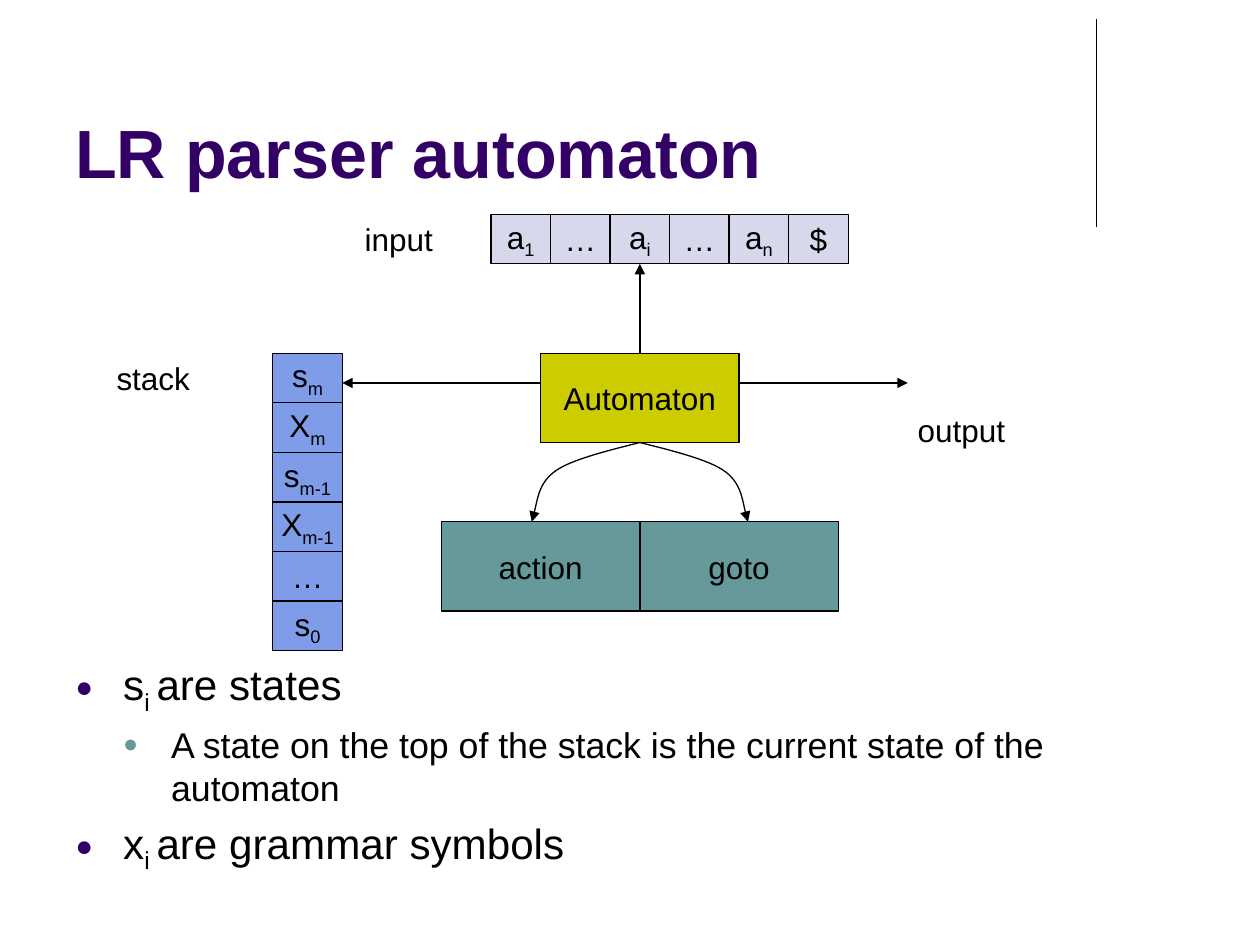
from lxml.etree import SubElement as Sub
from pptx import Presentation
from pptx.dml.color import RGBColor as RGB
from pptx.enum.shapes import MSO_CONNECTOR as Conn, MSO_SHAPE as Shape
from pptx.enum.text import MSO_ANCHOR as Anchor, PP_ALIGN as Align
from pptx.oxml.ns import qn
from pptx.util import Cm, Inches, Pt

BLACK = RGB(0x00, 0x00, 0x00)
PURPLE = RGB(0x33, 0x00, 0x66)
TEAL = RGB(0x66, 0x99, 0x99)
LILAC = RGB(0xD8, 0xD8, 0xEC)
BLUE = RGB(0x7E, 0x9C, 0xE8)
OLIVE = RGB(0xCC, 0xCC, 0x00)
FONT = "Arial"
WIDE, HIGH = Inches(10), Inches(7.5)
LEFT, TOP = 5.5, 4.32
MID = 7.4
BEND = [(0.28, 0.08), (1.3, 0.3), (1.68, 0.56), (2.04, 0.8), (2.1, 1.37), (2.18, 1.6)]


def spot(col, row):
    """Turn a column and row of the one-centimetre grid into a slide position."""
    return Cm(LEFT + col), Cm(TOP + row)


def share(x, y):
    """Turn shares of the slide's size into lengths."""
    return int(WIDE * x), int(HIGH * y)


def write(para, text, size=18, color=BLACK, bold=False):
    """Add runs to a paragraph, lowering every second part split at a bar."""
    for i, part in enumerate(text.split("|")):
        run = para.add_run()
        run.text = part
        font = run.font
        font.name, font.size, font.bold = FONT, Pt(size), bold
        font.color.rgb = color
        if i % 2:
            run._r.get_or_add_rPr().set("baseline", "-25000")


def box(slide, col, row, cols, rows, fill, text):
    """Draw a filled rectangle with centred text on the grid."""
    shape = slide.shapes.add_shape(Shape.RECTANGLE, *spot(col, row), Cm(cols), Cm(rows))
    shape.shadow.inherit = False
    shape.fill.solid()
    shape.fill.fore_color.rgb = fill
    ink(shape)
    frame = shape.text_frame
    frame.word_wrap, frame.vertical_anchor = False, Anchor.MIDDLE
    para = frame.paragraphs[0]
    para.alignment = Align.CENTER
    write(para, text)


def ink(shape, head=False):
    """Give a shape a thin black line, with an arrowhead at its end if wanted."""
    shape.line.color.rgb = BLACK
    shape.line.width = Pt(0.75)
    if head:
        Sub(shape.line._get_or_add_ln(), qn("a:tailEnd"), type="triangle")


def line(slide, start, end, head=True):
    """Draw a straight line between two slide positions."""
    wire = slide.shapes.add_connector(Conn.STRAIGHT, *start, *end)
    ink(wire, head)
    Sub(wire._element.spPr, qn("a:effectLst"))


def curve(slide, col, row, side):
    """Draw a curved arrow that bends down to one side."""
    pen = slide.shapes.build_freeform(*spot(col, row))
    pen.add_line_segments([spot(col + side * x, row + y) for x, y in BEND], close=False)
    shape = pen.convert_to_shape()
    shape.shadow.inherit = False
    shape.fill.background()
    ink(shape, True)
    steps = list(shape._element.iter(qn("a:lnTo")))
    for i in range(0, len(steps), 3):
        arc = Sub(steps[i].getparent(), qn("a:cubicBezTo"))
        for step in steps[i:i + 3]:
            arc.append(step[0])
            step.getparent().remove(step)


def label(slide, col, row, cols, text):
    """Place a one-line label on the grid."""
    area = slide.shapes.add_textbox(*spot(col, row), Cm(cols), Cm(1))
    area.text_frame.word_wrap = False
    write(area.text_frame.paragraphs[0], text)


def block(slide, at, size):
    """Add a wrapping text box by shares of the slide and return its frame."""
    frame = slide.shapes.add_textbox(*share(*at), *share(*size)).text_frame
    frame.word_wrap = True
    return frame


def point(para, text, level, size, color, gap):
    """Write a bulleted paragraph."""
    props = para._p.get_or_add_pPr()
    step = Inches(0.38)
    props.set("marL", str(step * (level + 1)))
    props.set("indent", str(-step))
    para.level = level
    para.space_before = Pt(gap)
    Sub(Sub(props, qn("a:buClr")), qn("a:srgbClr"), val=str(color))
    Sub(props, qn("a:buSzPct"), val="70000")
    Sub(props, qn("a:buFont"), typeface=FONT)
    Sub(props, qn("a:buChar"), char="●")
    write(para, text, size)


def main():
    """Build the slide and save it."""
    deck = Presentation()
    deck.slide_width, deck.slide_height = WIDE, HIGH
    slide = deck.slides.add_slide(deck.slide_layouts[6])

    line(slide, share(0.87, 0.02), share(0.87, 0.24), False)
    title = block(slide, (0.05, 0.02), (0.82, 0.19))
    title.vertical_anchor = Anchor.BOTTOM
    write(title.paragraphs[0], "LR parser automaton", 39, PURPLE, True)

    for i, text in enumerate(["a|1", "…", "a|i", "…", "a|n", "$"]):
        box(slide, 4.4 + 1.2 * i, 0, 1.2, 1, LILAC, text)
    for i, text in enumerate(["s|m", "X|m", "s|m-1", "X|m-1", "…", "s|0"]):
        box(slide, 0, 2.8 + i, 1.4, 1, BLUE, text)
    box(slide, MID - 2, 2.8, 4, 1.8, OLIVE, "Automaton")
    box(slide, MID - 4, 6.2, 4, 1.8, TEAL, "action")
    box(slide, MID, 6.2, 4, 1.8, TEAL, "goto")

    line(slide, spot(MID, 2.8), spot(MID, 1))
    line(slide, spot(MID - 2, 3.4), spot(1.4, 3.4))
    line(slide, spot(MID + 2, 3.4), spot(12.8, 3.4))
    for side in (-1, 1):
        curve(slide, MID, 4.6, side)

    label(slide, 1.6, 0, 1.9, "input")
    label(slide, -3.4, 2.8, 2, "stack")
    label(slide, 12.75, 3.85, 2.3, "output")

    body = block(slide, (0.05, 0.69), (0.9, 0.21))
    point(body.paragraphs[0], "s|i |are states", 0, 24.1, PURPLE, 0)
    state = "A state on the top of the stack is the current state of the automaton"
    point(body.add_paragraph(), state, 1, 20.4, TEAL, 4)
    point(body.add_paragraph(), "x|i |are grammar symbols", 0, 24.1, PURPLE, 4.8)
    deck.save("out.pptx")


if __name__ == "__main__":
    main()
